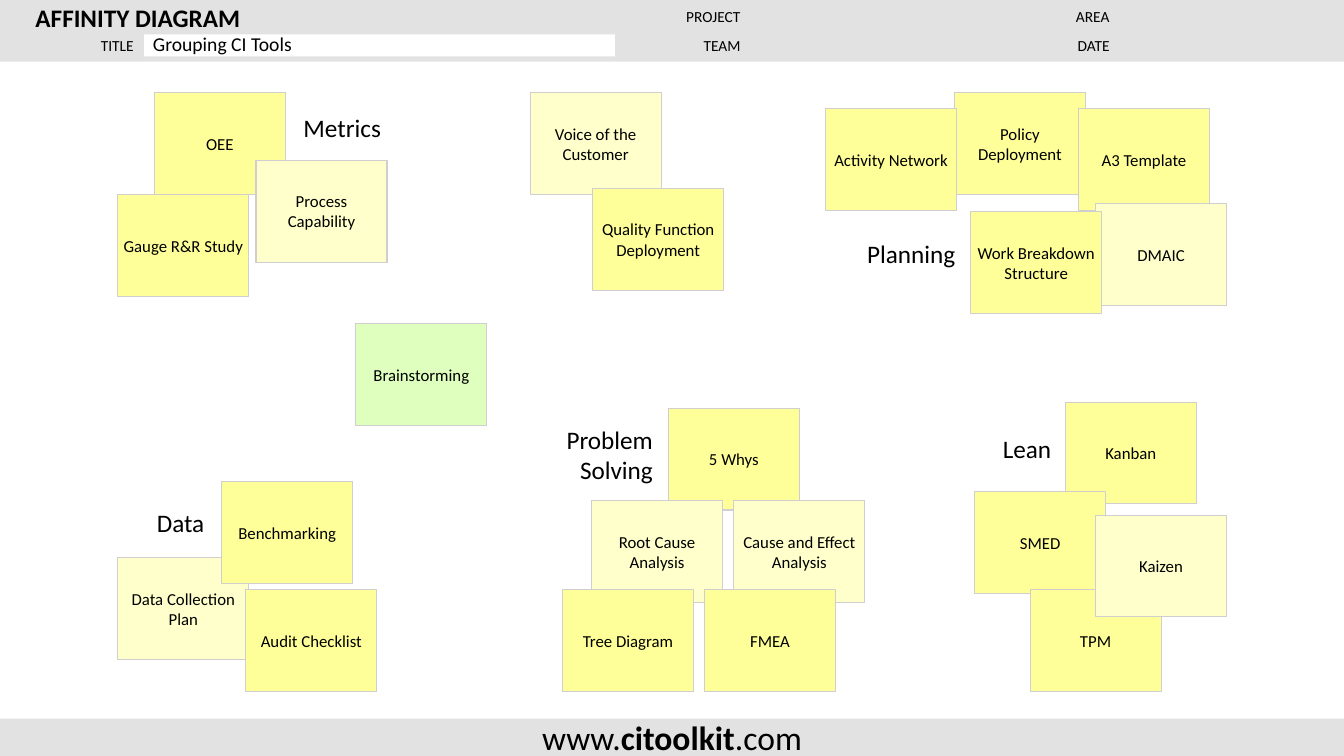
from lxml.etree import SubElement
from pptx import Presentation
from pptx.dml.color import RGBColor
from pptx.enum.shapes import MSO_SHAPE as Preset
from pptx.enum.text import MSO_ANCHOR as Anchor, MSO_AUTO_SIZE as AutoSize, PP_ALIGN as Align
from pptx.oxml.ns import qn
from pptx.util import Pt

TITLE = "AFFINITY DIAGRAM"
TOPIC = "Grouping CI Tools"
ADDRESS = [("www.", False), ("citoolkit", True), (".com", False)]

FONT = "Calibri"
BLACK, WHITE, BAR, EDGE = "000000", "FFFFFF", "E2E2E2", "D0CECE"
YELLOW, CREAM, GREEN = "FFFF99", "FFFFCC", "DEFFBD"

SLIDE_WIDTH, SLIDE_HEIGHT = 960, 540
HEADER_HEIGHT, FOOTER_TOP = 44, 513.4
NOTE_WIDTH, NOTE_HEIGHT = 93.6, 72.7
ROW_TOPS, ROW_HEIGHT = (3.6, 23.8), 16.6
INSET = 3

# Header fields: text, left, row, width
FIELDS = [
    ("PROJECT", 450, 0, 82),
    ("AREA", 737.3, 0, 58.3),
    ("TITLE", 10.8, 1, 87.8),
    ("TEAM", 450, 1, 82),
    ("DATE", 737.3, 1, 58.3),
]

# Notes from back to front: text, left, top, colour
NOTES = [
    ("Brainstorming", 254.2, 231.1, GREEN),
    ("Data Collection Plan", 84.2, 398.2, CREAM),
    ("Benchmarking", 158.4, 344.2, YELLOW),
    ("Audit Checklist", 175.7, 421.2, YELLOW),
    ("Kanban", 761, 287.3, YELLOW),
    ("SMED", 696.2, 351.4, YELLOW),
    ("TPM", 735.8, 421.2, YELLOW),
    ("Kaizen", 782.6, 367.9, CREAM),
    ("OEE", 110.2, 66.2, YELLOW),
    ("Process Capability", 182.9, 114.5, CREAM),
    ("Gauge R&R Study", 84.2, 139, YELLOW),
    ("Policy Deployment", 681.8, 66.2, YELLOW),
    ("A3 Template", 770.4, 77.8, YELLOW),
    ("Activity Network", 589.7, 77.8, YELLOW),
    ("DMAIC", 782.6, 145.4, CREAM),
    ("Work Breakdown Structure", 693.4, 151.2, YELLOW),
    ("Voice of the Customer", 378.7, 66.2, CREAM),
    ("Quality Function Deployment", 423.4, 134.6, YELLOW),
    ("5 Whys", 477.4, 291.6, YELLOW),
    ("Cause and Effect Analysis", 524.2, 357.8, CREAM),
    ("Root Cause Analysis", 422.6, 357.8, CREAM),
    ("FMEA", 503.3, 421.2, YELLOW),
    ("Tree Diagram", 401.8, 421.2, YELLOW),
]

# Group names: text, left, top, width, height, alignment
GROUPS = [
    ("Data", 93.6, 358.6, 55.4, 28.8, Align.RIGHT),
    ("Lean", 700.6, 306, 53.3, 28.8, Align.RIGHT),
    ("Metrics", 213.8, 65.5, 74.2, 51.1, Align.LEFT),
    ("Planning", 591.8, 167, 93.6, 28.8, Align.RIGHT),
    ("Problem\nSolving", 378.7, 298.8, 90.7, 51.1, Align.RIGHT),
]


def color(value):
    return RGBColor.from_string(value)


def style_font(font, size, bold=False):
    font.name, font.size, font.bold = FONT, Pt(size), bold
    font.color.rgb = color(BLACK)


def write(box, text, size, align, bold=False):
    frame = box.text_frame
    frame.text = text
    frame.word_wrap, frame.auto_size = True, AutoSize.NONE
    frame.vertical_anchor = Anchor.MIDDLE
    frame.margin_left = frame.margin_right = Pt(INSET)
    frame.margin_top = frame.margin_bottom = Pt(INSET)
    for para in frame.paragraphs:
        para.alignment = align
        style_font(para.font, size, bold)


def add_rectangle(page, left, top, width, height, fill, edge=None):
    box = page.shapes.add_shape(Preset.RECTANGLE, Pt(left), Pt(top), Pt(width), Pt(height))
    box.shadow.inherit = False
    box.fill.solid()
    box.fill.fore_color.rgb = color(fill)
    if edge:
        box.line.color.rgb = color(edge)
        box.line.width = Pt(0.75)
    else:
        box.line.fill.background()
    return box


def add_label(page, text, left, top, width, height, size, align):
    box = page.shapes.add_textbox(Pt(left), Pt(top), Pt(width), Pt(height))
    write(box, text, size, align)


def place(box, left, top, width, height):
    box.left, box.top, box.width, box.height = Pt(left), Pt(top), Pt(width), Pt(height)


def add_header(page):
    title, topic = page.shapes.title, page.placeholders[1]
    bar = add_rectangle(page, 0, 0, SLIDE_WIDTH, HEADER_HEIGHT, BAR)
    title.element.addprevious(bar.element)  # behind the placeholders

    place(title, 22.3, 0, 417, 24.5)
    write(title, TITLE, 18, Align.LEFT, bold=True)

    place(topic, 103, 24.5, 336.2, 15.8)
    topic.fill.solid()
    topic.fill.fore_color.rgb = color(WHITE)
    write(topic, TOPIC, 14, Align.LEFT)
    topic.text_frame.margin_left = Pt(6.2)
    para = topic.text_frame.paragraphs[0]
    para.line_spacing, para.space_before = 0.9, Pt(0)
    properties = para._p.get_or_add_pPr()
    properties.set("marL", "0")
    properties.set("indent", "0")
    no_bullet = SubElement(properties, qn("a:buNone"))
    properties.find(qn("a:defRPr")).addprevious(no_bullet)

    for text, left, row, width in FIELDS:
        add_label(page, text, left, ROW_TOPS[row], width, ROW_HEIGHT, 11, Align.RIGHT)


def add_footer(page):
    bar = add_rectangle(page, 0, FOOTER_TOP, SLIDE_WIDTH, SLIDE_HEIGHT - FOOTER_TOP, BAR)
    write(bar, "", 24, Align.CENTER)
    para = bar.text_frame.paragraphs[0]
    for text, bold in ADDRESS:
        span = para.add_run()
        span.text = text
        style_font(span.font, 24, bold)


def main():
    deck = Presentation()
    deck.slide_width, deck.slide_height = Pt(SLIDE_WIDTH), Pt(SLIDE_HEIGHT)
    page = deck.slides.add_slide(deck.slide_layouts[1])
    add_header(page)
    add_footer(page)
    for text, left, top, fill in NOTES:
        note = add_rectangle(page, left, top, NOTE_WIDTH, NOTE_HEIGHT, fill, EDGE)
        write(note, text, 12, Align.CENTER)
    for text, left, top, width, height, align in GROUPS:
        add_label(page, text, left, top, width, height, 18, align)
    deck.save("out.pptx")


if __name__ == "__main__":
    main()
